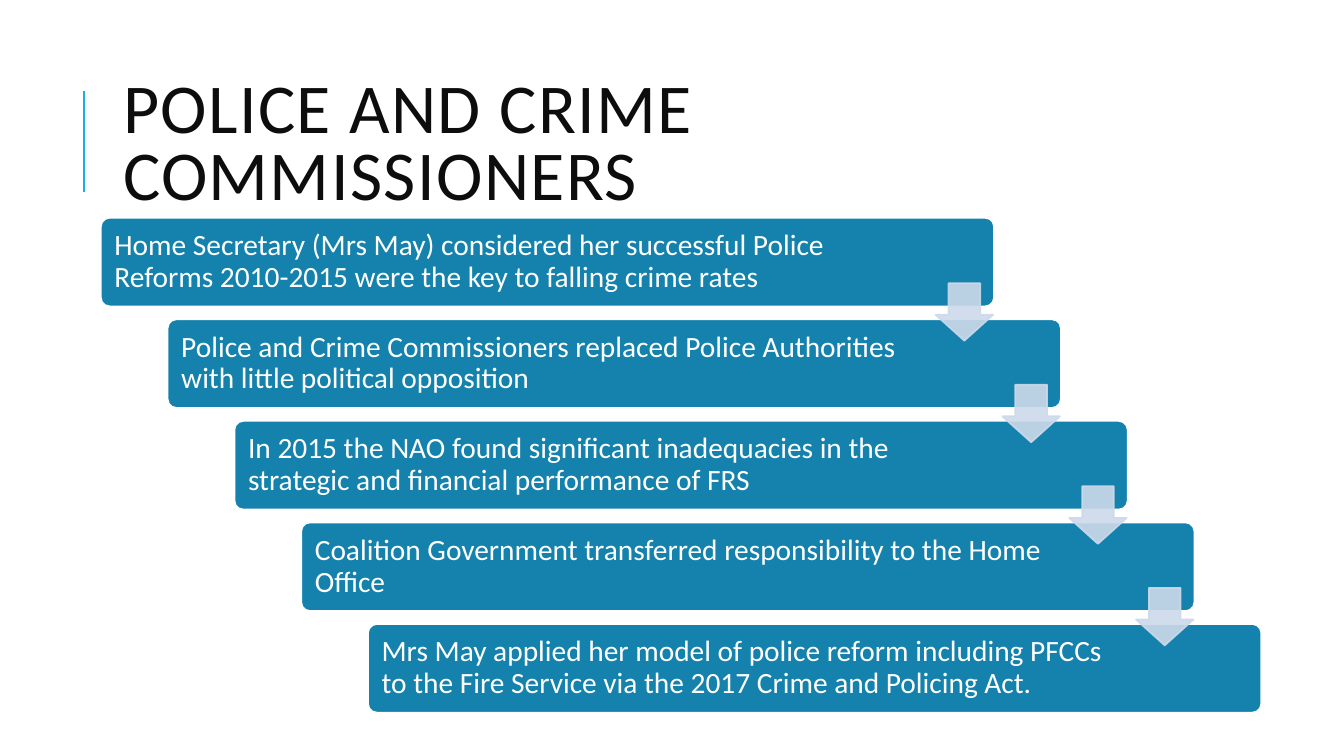
"""Build a slide with a descending staircase of steps on police reform."""
from dataclasses import dataclass

from lxml import etree
from pptx import Presentation
from pptx import util as u
from pptx.dml.color import RGBColor
from pptx.enum import shapes, text
from pptx.oxml import ns

TITLE = "POLICE AND CRIME COMMISSIONERS"
STEPS = [
    "Home Secretary (Mrs May) considered her successful Police Reforms 2010-2015 were the key to falling crime rates",
    "Police and Crime Commissioners replaced Police Authorities with little political opposition",
    "In 2015 the NAO found significant inadequacies in the strategic and financial performance of FRS",
    "Coalition Government transferred responsibility to the Home Office",
    "Mrs May applied her model of police reform including PFCCs to the Fire Service via the 2017 Crime and Policing Act.",
]


@dataclass(frozen=True)
class Theme:
    font: str = "Calibri"
    title_size: float = 50
    step_size: float = 21
    outline: float = 1.25
    rule_width: float = 1.5
    ink: str = "0D0D0D"
    paper: str = "FFFFFF"
    rule: str = "1CADE4"
    bar: str = "1482AC"
    arrow: str = "CDD9EA"
    arrow_opacity: int = 90


THEME = Theme()
SLIDE_SIZE = (13.33, 7.5)
TITLE_BOX = (1.12, 0.64, 10.63, 1.64)
RULE_X, RULE_TOP, RULE_BOTTOM = 0.83, 0.9, 1.9
FIRST_BAR, LAST_BAR = (1, 2.16), (3.65, 6.19)
BAR_SIZE = (8.86, 0.88)
BAR_INSETS = (0.11, 0.11, 1.35, 0.11)
ARROW_OFFSET, ARROW_SIDE = (8.28, 0.65), 0.57


def write(shape, words, *, size, color, line_spacing, tracking=0, insets=None):
    frame = shape.text_frame
    frame.word_wrap = True
    frame.auto_size = text.MSO_AUTO_SIZE.NONE
    frame.vertical_anchor = text.MSO_ANCHOR.MIDDLE
    if insets:
        (frame.margin_left, frame.margin_top,
         frame.margin_right, frame.margin_bottom) = map(u.Inches, insets)
    paragraph = frame.paragraphs[0]
    paragraph.alignment = text.PP_ALIGN.LEFT
    paragraph.line_spacing = line_spacing
    run = paragraph.add_run()
    run.text = words
    run.font.name = THEME.font
    run.font.size = u.Pt(size)
    run.font.color.rgb = RGBColor.from_string(color)
    if tracking:
        run._r.get_or_add_rPr().set("spc", str(tracking * 100))


def add_box(slide, preset, box, adjustments, fill, line, opacity=100):
    shape = slide.shapes.add_shape(preset, *map(u.Inches, box))
    shape.shadow.inherit = False
    for index, value in enumerate(adjustments):
        shape.adjustments[index] = value
    shape.fill.solid()
    shape.fill.fore_color.rgb = RGBColor.from_string(fill)
    shape.line.color.rgb = RGBColor.from_string(line)
    shape.line.width = u.Pt(THEME.outline)
    if opacity < 100:
        for color in shape._element.spPr.iter(ns.qn("a:srgbClr")):
            etree.SubElement(color, ns.qn("a:alpha"), val=str(opacity * 1000))
    return shape


def add_title(slide):
    rule = slide.shapes.add_connector(
        shapes.MSO_CONNECTOR.STRAIGHT,
        *map(u.Inches, (RULE_X, RULE_BOTTOM, RULE_X, RULE_TOP)))
    rule.line.color.rgb = RGBColor.from_string(THEME.rule)
    rule.line.width = u.Pt(THEME.rule_width)
    etree.SubElement(rule._element.spPr, ns.qn("a:effectLst"))
    title = slide.shapes.title
    title.left, title.top, title.width, title.height = map(u.Inches, TITLE_BOX)
    write(title, TITLE, size=THEME.title_size, color=THEME.ink,
          line_spacing=0.8, tracking=1)


def add_staircase(slide):
    gaps = len(STEPS) - 1
    corners = [
        tuple(first + (last - first) * index / gaps
              for first, last in zip(FIRST_BAR, LAST_BAR))
        for index in range(len(STEPS))
    ]
    for corner, words in zip(corners, STEPS):
        bar = add_box(slide, shapes.MSO_SHAPE.ROUNDED_RECTANGLE,
                      corner + BAR_SIZE, [0.1], THEME.bar, THEME.paper)
        write(bar, words, size=THEME.step_size, color=THEME.paper,
              line_spacing=0.9, insets=BAR_INSETS)
    for left, top in corners[:-1]:
        box = (left + ARROW_OFFSET[0], top + ARROW_OFFSET[1], ARROW_SIDE, ARROW_SIDE)
        add_box(slide, shapes.MSO_SHAPE.DOWN_ARROW, box, [0.55, 0.45],
                THEME.arrow, THEME.arrow, THEME.arrow_opacity)


def main():
    presentation = Presentation()
    presentation.slide_width, presentation.slide_height = map(u.Inches, SLIDE_SIZE)
    slide = presentation.slides.add_slide(presentation.slide_layouts[5])
    add_title(slide)
    add_staircase(slide)
    presentation.save("out.pptx")


if __name__ == "__main__":
    main()
